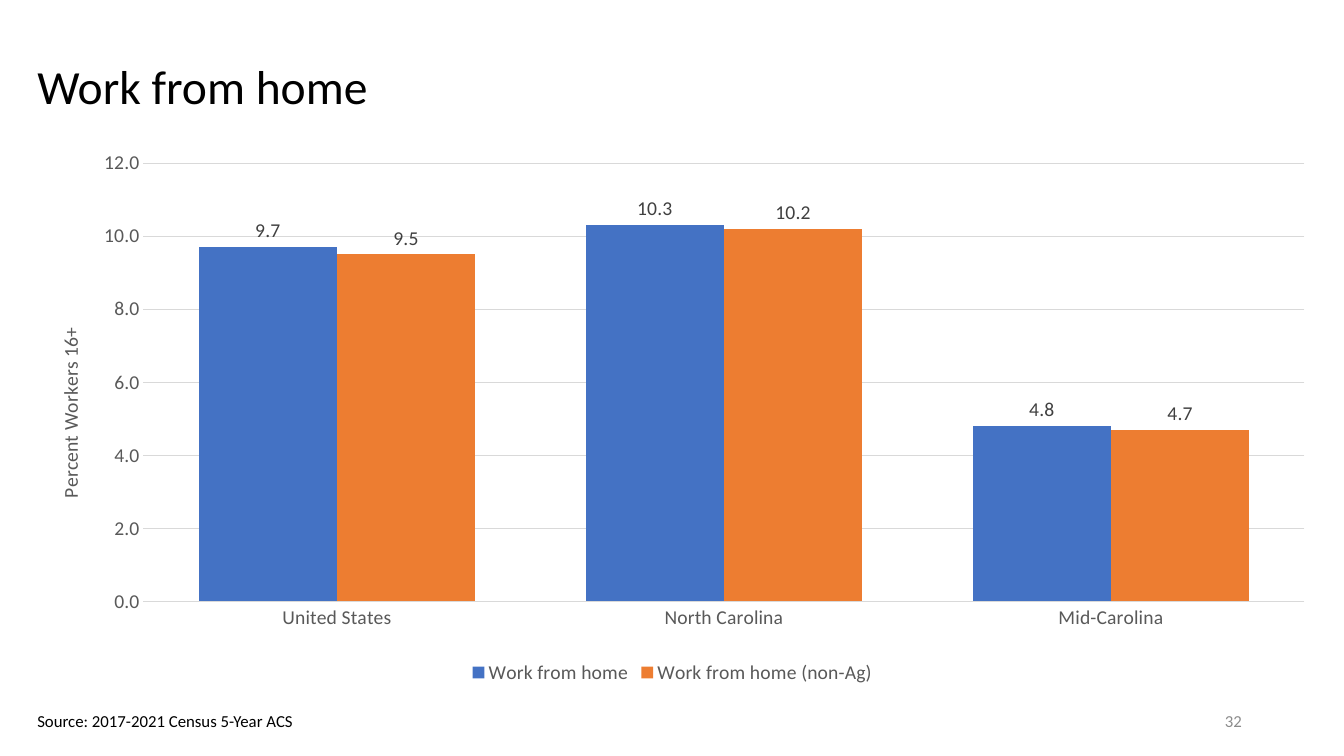
"""Build the work-from-home slide with its clustered column chart."""
from dataclasses import dataclass

from lxml.etree import SubElement
from pptx import Presentation
from pptx.chart.data import CategoryChartData
from pptx.dml.color import RGBColor
from pptx.enum.chart import XL_CHART_TYPE, XL_LABEL_POSITION, XL_LEGEND_POSITION, XL_TICK_MARK
from pptx.enum.text import MSO_ANCHOR, PP_ALIGN
from pptx.oxml.ns import qn
from pptx.util import Cm, Pt


@dataclass(frozen=True)
class Theme:
    font: str = "Calibri"
    text: str = "000000"
    muted: str = "8C8C8C"
    axis: str = "595959"
    label: str = "404040"
    grid: str = "D9D9D9"
    series: tuple = ("4472C4", "ED7D31")
    title_size: int = 34
    chart_size: int = 14
    note_size: int = 12


class SlideBuilder:
    def __init__(self, slide, theme):
        self.slide = slide
        self.theme = theme

    def style(self, font, size, color):
        font.name = self.theme.font
        font.size = Pt(size)
        font.bold = False
        font.color.rgb = RGBColor.from_string(color)

    def add_text(self, tf, text, size, color, align=PP_ALIGN.LEFT):
        p = tf.paragraphs[0]
        p.alignment = align
        r = p.add_run()
        r.text = text
        self.style(r.font, size, color)
        return p

    def title(self, text, left, top, width, height):
        sp = self.slide.shapes.title
        sp.left, sp.top, sp.width, sp.height = Cm(left), Cm(top), Cm(width), Cm(height)
        tf = sp.text_frame
        tf.vertical_anchor = MSO_ANCHOR.MIDDLE
        p = self.add_text(tf, text, self.theme.title_size, self.theme.text)
        p.line_spacing = 0.9

    def note(self, text, box, color, align=PP_ALIGN.LEFT, anchor=MSO_ANCHOR.TOP, wrap=False):
        sp = self.slide.shapes.add_textbox(*map(Cm, box))
        tf = sp.text_frame
        tf.word_wrap = wrap
        tf.vertical_anchor = anchor
        self.add_text(tf, text, self.theme.note_size, color, align)

    def place(self, parent, index, **values):
        layout = parent.find(qn("c:layout"))
        if layout is None:
            layout = parent.makeelement(qn("c:layout"))
            parent.insert(index, layout)
        manual = SubElement(layout, qn("c:manualLayout"))
        for name, value in values.items():
            SubElement(manual, qn(f"c:{name}")).set("val", str(value))

    def rule(self, line):
        line.color.rgb = RGBColor.from_string(self.theme.grid)
        line.width = Pt(0.75)

    def column_chart(self, categories, series, axis_title, left, top, width, height):
        theme = self.theme
        data = CategoryChartData(number_format="0.0")
        data.categories = categories
        for name, values in series.items():
            data.add_series(name, values)
        chart = self.slide.shapes.add_chart(
            XL_CHART_TYPE.COLUMN_CLUSTERED, Cm(left), Cm(top), Cm(width), Cm(height), data
        ).chart
        self.style(chart.font, theme.chart_size, theme.text)
        chart.has_title = False
        chart.has_legend = True
        chart.legend.position = XL_LEGEND_POSITION.BOTTOM
        chart.legend.include_in_layout = False
        self.style(chart.legend.font, theme.chart_size, theme.axis)
        self.bars(chart.plots[0])
        self.axes(chart, axis_title)
        self.place(chart.plots[0]._element.getparent(), 0, layoutTarget="inner",
                   xMode="edge", yMode="edge", x=0.09, y=0.035, w=0.9, h=0.805)

    def bars(self, plot):
        plot.gap_width = 80
        plot.overlap = 0
        plot.vary_by_categories = False
        for ser, color in zip(plot.series, self.theme.series):
            ser.format.fill.solid()
            ser.format.fill.fore_color.rgb = RGBColor.from_string(color)
            labels = ser.data_labels
            labels.show_value = True
            labels.position = XL_LABEL_POSITION.OUTSIDE_END
            labels.number_format = "0.0"
            labels.number_format_is_linked = False
            self.style(labels.font, self.theme.chart_size, self.theme.label)

    def axes(self, chart, axis_title):
        cat, val = chart.category_axis, chart.value_axis
        for axis in (cat, val):
            axis.major_tick_mark = axis.minor_tick_mark = XL_TICK_MARK.NONE
            self.style(axis.tick_labels.font, self.theme.chart_size, self.theme.axis)
        self.rule(cat.format.line)
        val.format.line.fill.background()
        val.minimum_scale, val.maximum_scale, val.major_unit = 0, 12, 2
        val.has_major_gridlines = True
        self.rule(val.major_gridlines.format.line)
        val.tick_labels.number_format = "0.0"
        val.tick_labels.number_format_is_linked = False
        title = val.axis_title
        self.add_text(title.text_frame, axis_title, self.theme.chart_size, self.theme.axis,
                      PP_ALIGN.CENTER)
        self.place(title._element, 1, xMode="edge", yMode="edge", x=0.02, y=0.33)


def main():
    prs = Presentation()
    prs.slide_width, prs.slide_height = Cm(33.87), Cm(19.05)
    theme = Theme()
    s = SlideBuilder(prs.slides.add_slide(prs.slide_layouts[5]), theme)
    s.title("Work from home", 0.69, 0.86, 32.41, 2.77)
    s.note("32", (23.93, 17.65, 7.62, 1.02), theme.muted, PP_ALIGN.RIGHT, MSO_ANCHOR.MIDDLE, True)
    s.note("Source: 2017-2021 Census 5-Year ACS", (0.69, 17.78, 7.06, 0.76), theme.text)
    s.column_chart(
        ["United States", "North Carolina", "Mid-Carolina"],
        {"Work from home": (9.7, 10.3, 4.8), "Work from home (non-Ag)": (9.5, 10.2, 4.7)},
        "Percent Workers 16+", 0.69, 3.63, 32.51, 13.72,
    )
    prs.save("out.pptx")


if __name__ == "__main__":
    main()
